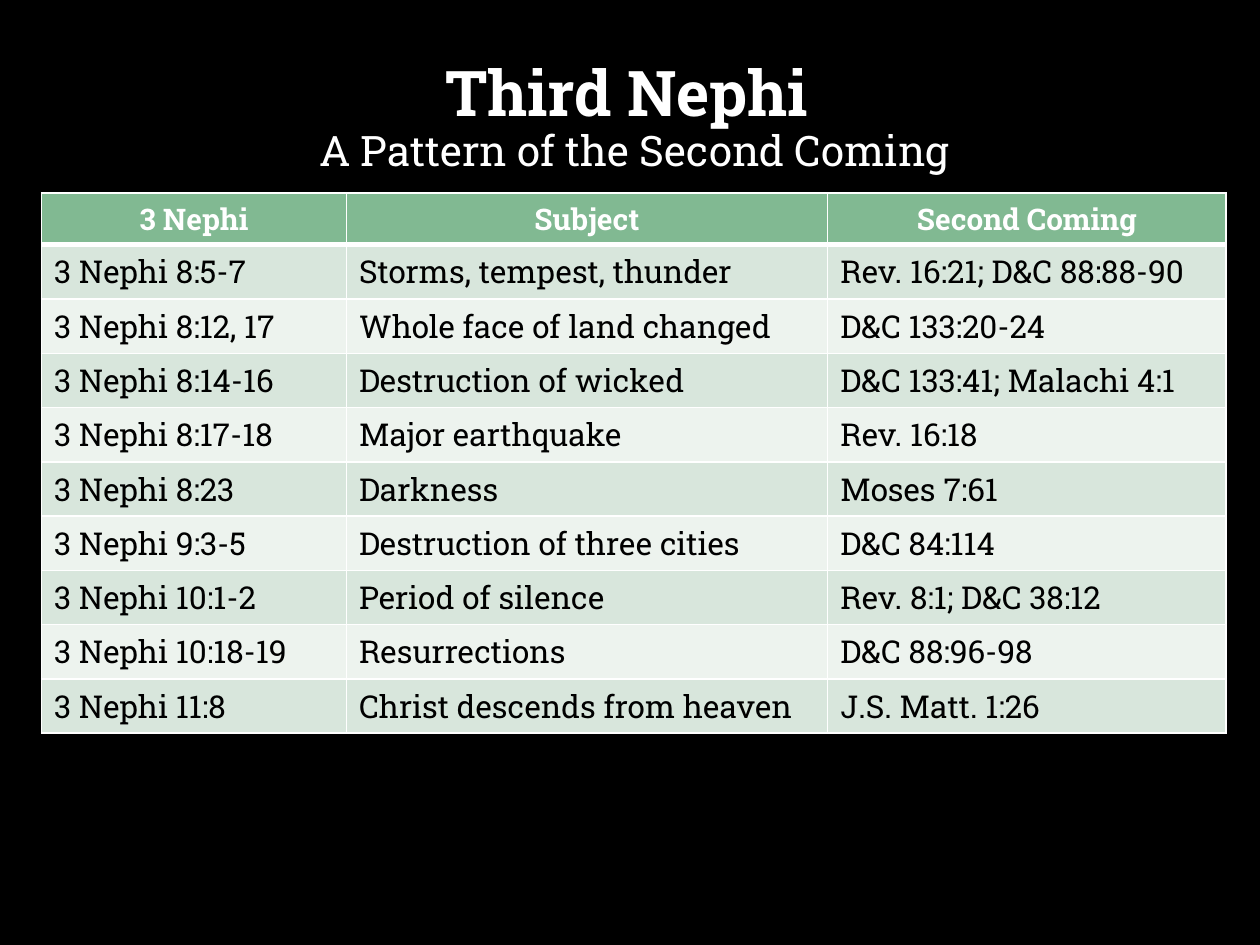
from dataclasses import dataclass
from typing import NamedTuple

from lxml.etree import SubElement
from pptx import Presentation
from pptx.dml.color import RGBColor as RGB
from pptx.enum.text import MSO_ANCHOR as Anchor, PP_ALIGN as Align
from pptx.oxml.ns import qn
from pptx.util import Emu, Inches, Pt


@dataclass(frozen=True)
class Theme:
    font: str = "Roboto Slab"
    background: str = "000000"
    light: str = "FFFFFF"
    dark: str = "000000"
    header: str = "81B992"
    bands: tuple = ("D8E6DC", "EDF3EE")
    title_size: float = 36
    subtitle_size: float = 24
    header_size: float = 17
    body_size: float = 18
    rule: float = 1
    header_rule: float = 3


class Passage(NamedTuple):
    nephi: str
    subject: str
    second_coming: str


THEME = Theme()
HEADINGS = Passage("3 Nephi", "Subject", "Second Coming")
PASSAGES = [
    Passage("3 Nephi 8:5-7", "Storms, tempest, thunder", "Rev. 16:21; D&C 88:88-90"),
    Passage("3 Nephi 8:12, 17", "Whole face of land changed", "D&C 133:20-24"),
    Passage("3 Nephi 8:14-16", "Destruction of wicked", "D&C 133:41; Malachi 4:1"),
    Passage("3 Nephi 8:17-18", "Major earthquake", "Rev. 16:18"),
    Passage("3 Nephi 8:23", "Darkness", "Moses 7:61"),
    Passage("3 Nephi 9:3-5", "Destruction of three cities", "D&C 84:114"),
    Passage("3 Nephi 10:1-2", "Period of silence", "Rev. 8:1; D&C 38:12"),
    Passage("3 Nephi 10:18-19", "Resurrections", "D&C 88:96-98"),
    Passage("3 Nephi 11:8", "Christ descends from heaven", "J.S. Matt. 1:26"),
]
COLUMN_WIDTHS = (2.42, 3.82, 3.16)
ROW_HEIGHT = 0.41


def style(p, size: float, color: str, bold: bool, align: Align) -> None:
    p.alignment = align
    p.font.name = THEME.font
    p.font.size = Pt(size)
    p.font.bold = bold
    p.font.color.rgb = RGB.from_string(color)


def add_borders(cell, bottom: float, top: float) -> None:
    """Rule all four sides; borders must come before the cell's fill."""
    props = cell._tc.get_or_add_tcPr()
    widths = {"lnL": THEME.rule, "lnR": THEME.rule, "lnT": top, "lnB": bottom}
    for side, width in widths.items():
        line = SubElement(props, qn(f"a:{side}"), w=str(Pt(width)))
        fill = SubElement(line, qn("a:solidFill"))
        SubElement(fill, qn("a:srgbClr"), val=THEME.light)


def add_title(slide, prs) -> None:
    sp = slide.shapes.title
    sp.left, sp.top = Emu(int(prs.slide_width * 0.083)), Emu(int(prs.slide_height * 0.052))
    sp.width, sp.height = Emu(int(prs.slide_width * 0.841)), Emu(int(prs.slide_height * 0.148))
    tf = sp.text_frame
    tf.word_wrap = True
    tf.vertical_anchor = Anchor.MIDDLE
    tf.text = "Third Nephi \nA Pattern of the Second Coming"
    for p, size, bold in zip(tf.paragraphs, (THEME.title_size, THEME.subtitle_size), (True, False)):
        style(p, size, THEME.light, bold, Align.CENTER)
        p.line_spacing = 0.9


def add_passages(slide) -> None:
    rows = [HEADINGS, *PASSAGES]
    table = slide.shapes.add_table(
        len(rows), len(HEADINGS), Inches(0.33), Inches(1.53),
        Inches(sum(COLUMN_WIDTHS)), Inches(ROW_HEIGHT * len(rows))).table
    for column, width in zip(table.columns, COLUMN_WIDTHS):
        column.width = Inches(width)
    for i, passage in enumerate(rows):
        table.rows[i].height = Inches(ROW_HEIGHT)
        for j, text in enumerate(passage):
            cell = table.cell(i, j)
            cell.text = text
            p = cell.text_frame.paragraphs[0]
            if i == 0:
                style(p, THEME.header_size, THEME.light, True, Align.CENTER)
                add_borders(cell, THEME.header_rule, THEME.rule)
                color = THEME.header
            else:
                style(p, THEME.body_size, THEME.dark, False, Align.LEFT)
                add_borders(cell, THEME.rule, THEME.header_rule if i == 1 else THEME.rule)
                color = THEME.bands[(i - 1) % 2]
            cell.fill.solid()
            cell.fill.fore_color.rgb = RGB.from_string(color)


def main() -> None:
    prs = Presentation()
    prs.slide_width, prs.slide_height = Inches(10), Inches(7.5)
    slide = prs.slides.add_slide(prs.slide_layouts[5])  # Title Only
    slide.background.fill.solid()
    slide.background.fill.fore_color.rgb = RGB.from_string(THEME.background)
    add_title(slide, prs)
    add_passages(slide)
    prs.save("out.pptx")


if __name__ == "__main__":
    main()
